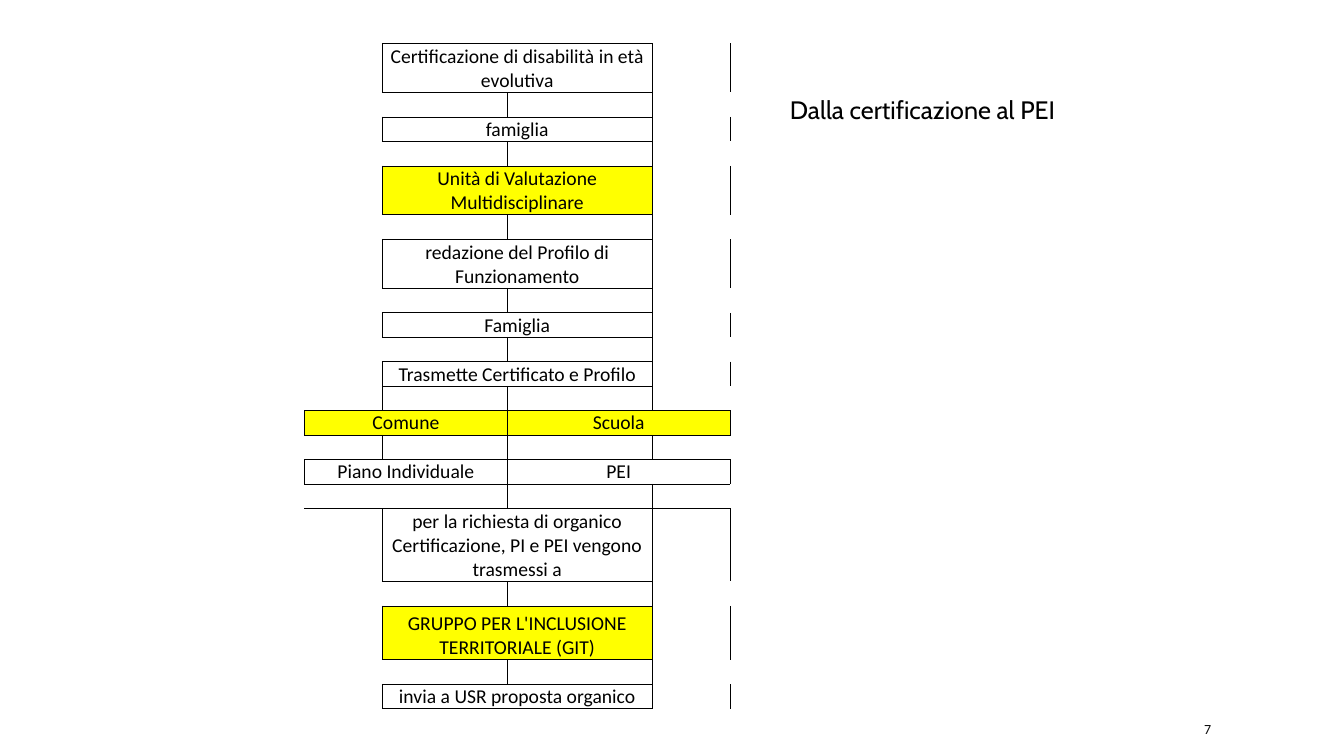
from lxml.etree import SubElement
from pptx import Presentation
from pptx.dml.color import RGBColor
from pptx.enum.text import MSO_ANCHOR, MSO_AUTO_SIZE, PP_ALIGN
from pptx.oxml.ns import qn
from pptx.util import Pt

COLORS = {"ink": "000000", "number": "0D0D0D", "highlight": "FFFF00"}
PLAIN_STYLE = "{2D5ABB26-0587-4C30-8999-92F81FD0307C}"
LINE, DOUBLE = 17.5, 35
WIDTHS = [55.5, 89.5, 103.5, 55.5]
STEPS = [
    (DOUBLE, False, ["Certificazione di disabilità in età evolutiva"]),
    (LINE, False, ["famiglia"]),
    (DOUBLE, True, ["Unità di Valutazione Multidisciplinare"]),
    (DOUBLE, False, ["redazione del Profilo di Funzionamento"]),
    (LINE, False, ["Famiglia"]),
    (LINE, False, ["Trasmette Certificato e Profilo"]),
    (LINE, True, ["Comune", "Scuola"]),
    (LINE, False, ["Piano Individuale", "PEI"]),
    (52, False, ["per la richiesta di organico Certificazione, PI e PEI vengono trasmessi a"]),
    (38.5, True, ["GRUPPO PER L'INCLUSIONE TERRITORIALE (GIT)"]),
    (LINE, False, ["invia a USR proposta organico"]),
]


def color(name):
    return RGBColor.from_string(COLORS[name])


def style(paragraph, font_name, size, color_name, align):
    paragraph.alignment = align
    paragraph.font.name = font_name
    paragraph.font.size = Pt(size)
    paragraph.font.color.rgb = color(color_name)


def add_borders(cell, sides):
    properties = cell._tc.get_or_add_tcPr()
    for side in "LRTB":
        if side in sides:
            border = SubElement(properties, qn(f"a:ln{side}"), w=str(Pt(0.5)))
            fill = SubElement(border, qn("a:solidFill"))
            SubElement(fill, qn("a:srgbClr"), val=COLORS["ink"])


def format_cell(cell, sides, text="", highlighted=False):
    cell.margin_left = cell.margin_right = cell.margin_top = Pt(0.5)
    cell.margin_bottom = 0
    cell.vertical_anchor = MSO_ANCHOR.BOTTOM
    add_borders(cell, sides)
    if highlighted:
        cell.fill.solid()
        cell.fill.fore_color.rgb = color("highlight")
    else:
        cell.fill.background()
    cell.text = text
    paragraph = cell.text_frame.paragraphs[0]
    style(paragraph, "Calibri", 14, "ink", PP_ALIGN.CENTER)
    if not text:
        SubElement(paragraph._p, qn("a:endParaRPr"), sz="1400")


def fill_step(table, row, texts, highlighted):
    if len(texts) == 1:
        format_cell(table.cell(row, 0), "R")
        format_cell(table.cell(row, 3), "L")
    starts = [1] if len(texts) == 1 else [0, 2]
    for start, text in zip(starts, texts):
        table.cell(row, start).merge(table.cell(row, start + 1))
        format_cell(table.cell(row, start), "LRTB", text, highlighted)


def fill_link(table, row, above, below):
    forked = len(below) == 2
    for column in range(4):
        inner = column in (1, 2)
        sides = "T" if inner or len(above) == 2 else ""
        sides += "B" if inner or forked else ""
        if forked:
            sides += "RLRL"[column]
        elif inner:
            sides += "RL"[column - 1]
        format_cell(table.cell(row, column), sides)


def add_flow(slide, left, top):
    heights = [LINE] * (2 * len(STEPS) - 1)
    heights[::2] = [height for height, _, _ in STEPS]
    frame = slide.shapes.add_table(len(heights), len(WIDTHS), Pt(left), Pt(top),
                                   Pt(sum(WIDTHS)), Pt(sum(heights)))
    table = frame.table
    table.first_row = table.horz_banding = False
    table._tbl.tblPr.find(qn("a:tableStyleId")).text = PLAIN_STYLE
    for column, width in zip(table.columns, WIDTHS):
        column.width = Pt(width)
    for row, height in zip(table.rows, heights):
        row.height = Pt(height)
    for index, (_, highlighted, texts) in enumerate(STEPS):
        fill_step(table, 2 * index, texts, highlighted)
        if index:
            fill_link(table, 2 * index - 1, STEPS[index - 1][2], texts)


def add_title(slide, left, top, width, height):
    title = slide.shapes.title
    title.left, title.top, title.width, title.height = map(Pt, (left, top, width, height))
    title.text = "Dalla certificazione al PEI"
    title.text_frame.word_wrap = True
    title.text_frame.auto_size = MSO_AUTO_SIZE.SHAPE_TO_FIT_TEXT
    title.text_frame.vertical_anchor = MSO_ANCHOR.TOP
    style(title.text_frame.paragraphs[0], "Cabin", 18, "ink", PP_ALIGN.LEFT)


def add_page_number(slide, left, top, width, height):
    number = slide.shapes.add_textbox(*map(Pt, (left, top, width, height)))
    number.text_frame.text = "7"
    number.text_frame.word_wrap = True
    number.text_frame.vertical_anchor = MSO_ANCHOR.MIDDLE
    style(number.text_frame.paragraphs[0], "Calibri", 10, "number", PP_ALIGN.LEFT)


def main():
    presentation = Presentation()
    presentation.slide_width, presentation.slide_height = Pt(960), Pt(540)
    slide = presentation.slides.add_slide(presentation.slide_layouts[5])
    add_flow(slide, 217.5, 31)
    add_page_number(slide, 853, 510, 76, 21.5)
    add_title(slide, 557, 64, 241, 29)
    presentation.save("out.pptx")


if __name__ == "__main__":
    main()
